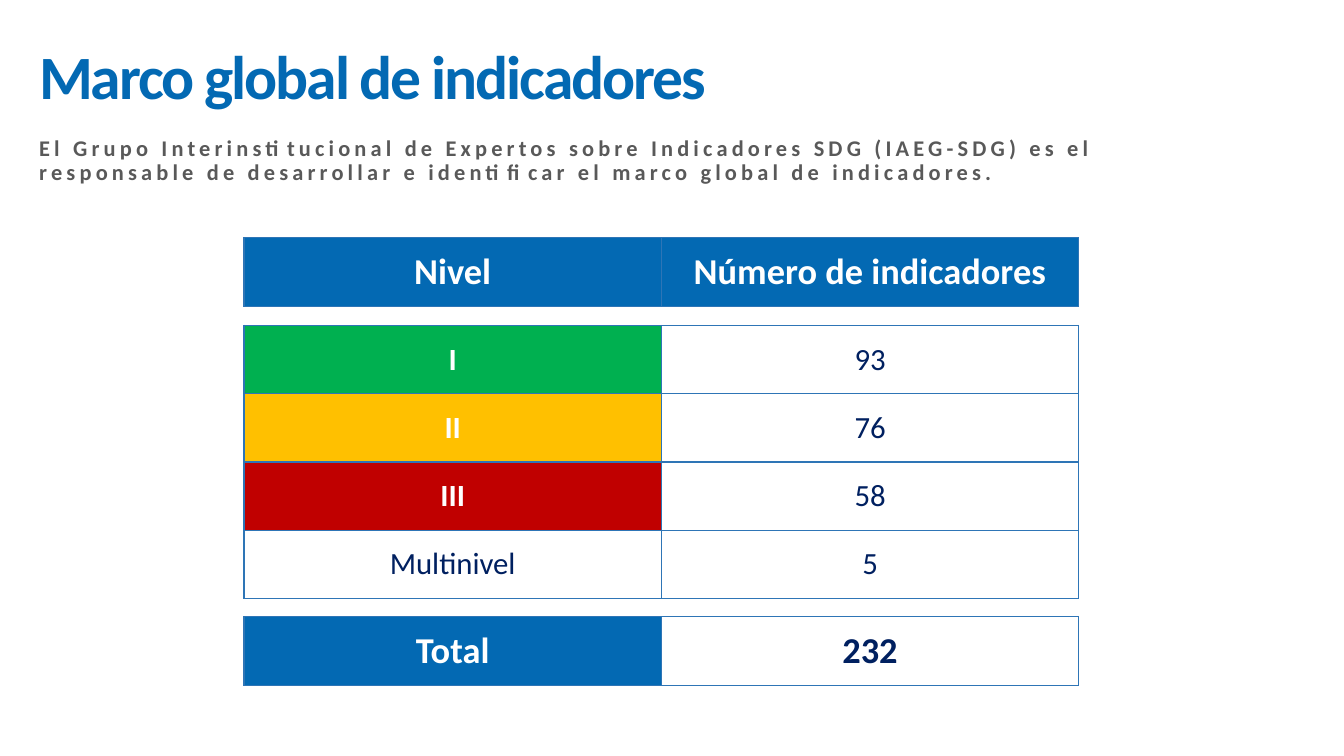
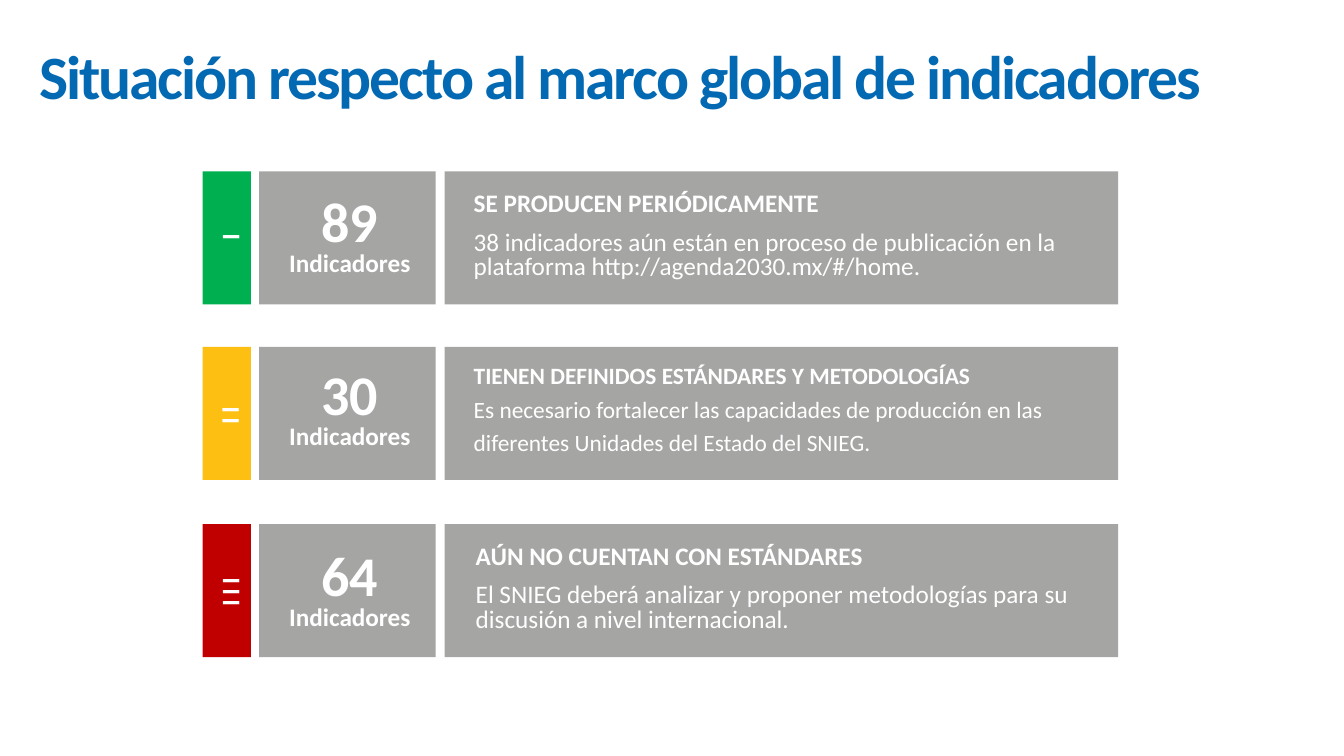
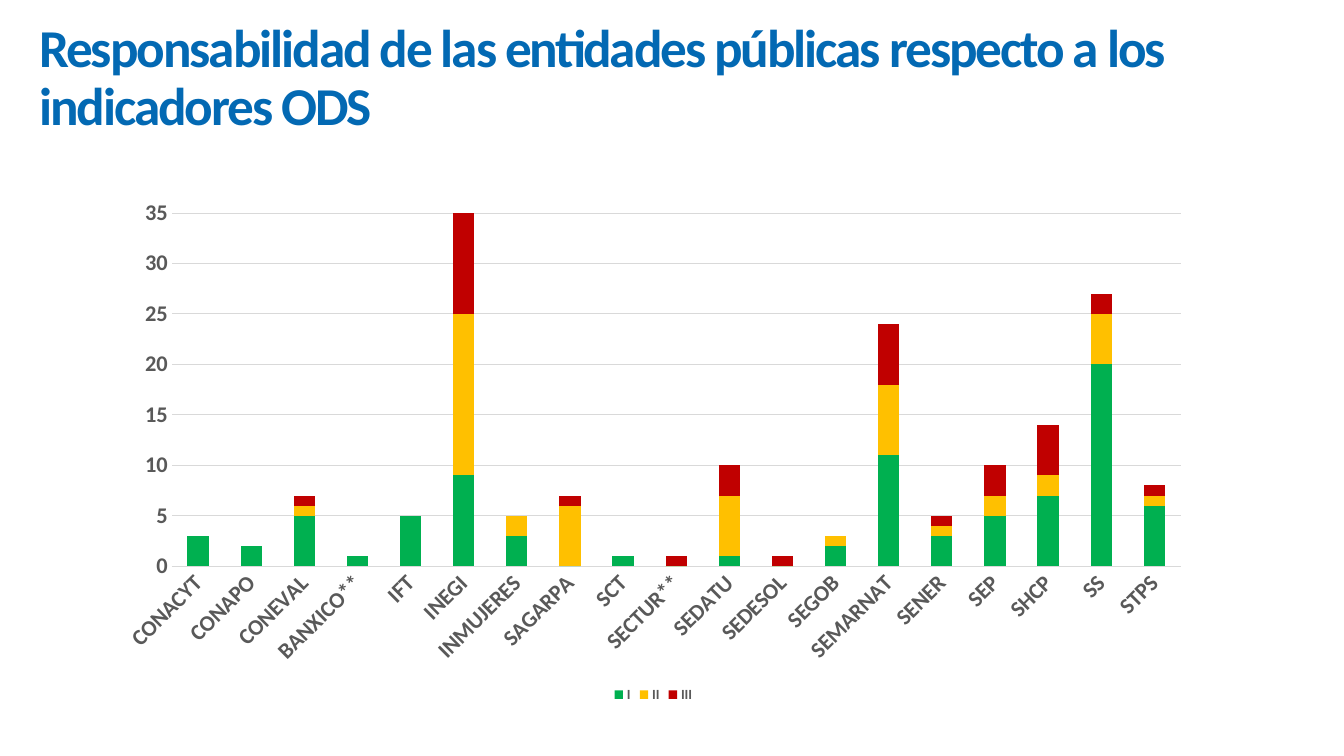
from pptx import Presentation
from pptx.chart.data import CategoryChartData
from pptx.dml.color import RGBColor
from pptx.enum.chart import XL_CHART_TYPE, XL_LEGEND_POSITION, XL_TICK_MARK
from pptx.enum.shapes import MSO_SHAPE
from pptx.enum.text import MSO_ANCHOR, PP_ALIGN
from pptx.oxml import parse_xml
from pptx.oxml.ns import nsdecls, qn
from pptx.util import Pt

LEFT, CENTER = PP_ALIGN.LEFT, PP_ALIGN.CENTER
TOP, MIDDLE = MSO_ANCHOR.TOP, MSO_ANCHOR.MIDDLE
RECTANGLE = MSO_SHAPE.RECTANGLE
NO_TICK = XL_TICK_MARK.NONE
STACKED = XL_CHART_TYPE.COLUMN_STACKED
LEGEND_BOTTOM = XL_LEGEND_POSITION.BOTTOM
PX = 9144  # 100 px to the inch


class Theme:
    font = "Calibri"
    blue = "0369B3"
    border = "2E75B6"
    navy = "002060"
    white = "FFFFFF"
    gray_text = "595959"
    gray_panel = "A5A5A4"
    grid = "D9D9D9"
    green = "00B050"
    yellow = "FFC000"
    amber = "FCBF12"
    red = "C00000"
    title = 44
    long_title = 38
    number = 40
    table_head = 26
    table_body = 22
    body = 18
    small_body = 16.7
    subtitle = 16
    axis = 16
    legend = 10


def add_runs(paragraph, runs, color, tracking=0):
    """Append (text, size, bold) runs; tracking is in points."""
    for text, size, bold in runs:
        run = paragraph.add_run()
        run.text = text
        run.font.name = Theme.font
        run.font.size = Pt(size)
        run.font.bold = bold
        run.font.color.rgb = RGBColor.from_string(color)
        if tracking:
            run._r.get_or_add_rPr().set("spc", str(int(tracking * 100)))


def add_text(slide, box, paragraphs, color, tracking=0, leading=None,
             align=LEFT, anchor=TOP, wrap=True):
    """Add a text box holding one list of runs per paragraph."""
    text_box = slide.shapes.add_textbox(*(v * PX for v in box))
    frame = text_box.text_frame
    frame.word_wrap = wrap
    frame.vertical_anchor = anchor
    for i, runs in enumerate(paragraphs):
        paragraph = frame.add_paragraph() if i else frame.paragraphs[0]
        paragraph.alignment = align
        if leading:
            paragraph.line_spacing = leading
        if i:
            paragraph.space_before = Pt(10)
        add_runs(paragraph, runs, color, tracking)
    return text_box


prs = Presentation()
prs.slide_width, prs.slide_height = 1333 * PX, 750 * PX

slides = []
for title, size in [
    ("Marco global de indicadores", Theme.title),
    ("Situación respecto al marco global de indicadores", Theme.title),
    ("Responsabilidad de las entidades públicas respecto a los indicadores ODS",
     Theme.long_title),
]:
    slide = prs.slides.add_slide(prs.slide_layouts[6])
    add_text(slide, (29, 27, 1204, 103), [[(title, size, True)]], Theme.blue,
             tracking=-1.5, leading=0.9, anchor=MIDDLE)
    slides.append(slide)
framework, status, responsibility = slides

# Global framework: levels and totals
add_text(framework, (29, 131, 1108, 62), [[(
    "El Grupo Interinstitucional de Expertos sobre Indicadores SDG (IAEG-SDG) es el "
    "responsable de desarrollar e identificar el marco global de indicadores.",
    Theme.subtitle, True)]], Theme.gray_text, tracking=3, leading=0.9)

# Each table: top, height, size, rows; each cell: text, bold, text colour, fill
level_tables = [
    (323, 271, Theme.table_body, [
        [("I", True, Theme.white, Theme.green), ("93", False, Theme.navy, Theme.white)],
        [("II", True, Theme.white, Theme.yellow), ("76", False, Theme.navy, Theme.white)],
        [("III", True, Theme.white, Theme.red), ("58", False, Theme.navy, Theme.white)],
        [("Multinivel", False, Theme.navy, Theme.white),
         ("5", False, Theme.navy, Theme.white)],
    ]),
    (236, 68, Theme.table_head, [
        [("Nivel", True, Theme.white, Theme.blue),
         ("Número de indicadores", True, Theme.white, Theme.blue)],
    ]),
    (612, 68, Theme.table_head, [
        [("Total", True, Theme.white, Theme.blue), ("232", True, Theme.navy, Theme.white)],
    ]),
]
for top, height, size, rows in level_tables:
    table = framework.shapes.add_table(
        len(rows), 2, 242 * PX, top * PX, 828 * PX, height * PX).table
    table.first_row = table.horz_banding = False
    for r, row in enumerate(rows):
        for c, (text, bold, color, fill) in enumerate(row):
            cell = table.cell(r, c)
            cell.margin_left = cell.margin_right = 4 * PX
            cell.margin_top = cell.margin_bottom = 2 * PX
            cell.vertical_anchor = MIDDLE
            for side in ("lnL", "lnR", "lnT", "lnB"):
                cell._tc.get_or_add_tcPr().append(parse_xml(
                    f'<a:{side} {nsdecls("a")} w="12700"><a:solidFill>'
                    f'<a:srgbClr val="{Theme.border}"/></a:solidFill></a:{side}>'))
            cell.fill.solid()
            cell.fill.fore_color.rgb = RGBColor.from_string(fill)
            paragraph = cell.text_frame.paragraphs[0]
            paragraph.alignment = CENTER
            add_runs(paragraph, [(text, size, bold)], color)

# Status of each level: numeral, count and description
# Each level: numeral, colour, count, tops of panel, count and numeral,
# left of description, size, leading, heading, lines
levels = [
    ("I", Theme.green, "89", 170, 193, 213, 460, Theme.body, 0.8,
     "SE PRODUCEN PERIÓDICAMENTE",
     ["38 indicadores aún están en proceso de publicación en la plataforma "
      "http://agenda2030.mx/#/home."]),
    ("II", Theme.amber, "30", 344, 365, 390, 460, Theme.small_body, 0.7,
     "TIENEN DEFINIDOS ESTÁNDARES Y METODOLOGÍAS",
     ["Es necesario fortalecer las capacidades de producción en las",
      "diferentes Unidades del Estado del SNIEG."]),
    ("III", Theme.red, "64", 520, 544, 565, 462, Theme.body, 0.8,
     "AÚN NO CUENTAN CON ESTÁNDARES",
     ["El SNIEG deberá analizar y proponer metodologías para su discusión "
      "a nivel internacional."]),
]
for (numeral, color, count, top, count_top, numeral_top, text_left, size, leading,
     heading, lines) in levels:
    for left, width, fill in [(257, 175, Theme.gray_panel),
                              (441, 668, Theme.gray_panel),
                              (201, 48, color)]:
        panel = status.shapes.add_shape(
            RECTANGLE, left * PX, top * PX, width * PX, 132 * PX)
        panel.shadow.inherit = False
        panel.fill.solid()
        panel.fill.fore_color.rgb = RGBColor.from_string(fill)
        panel.line.fill.background()
    add_text(status, (273, count_top, 148, 90),
             [[(count, Theme.number, True), (" ", Theme.subtitle, True),
               ("Indicadores", Theme.body, True)]],
             Theme.white, leading=0.8, align=CENTER)
    add_text(status, (text_left, top + 17, 625, 103),
             [[(heading, size, True)]] + [[(line, size, False)] for line in lines],
             Theme.white, leading=leading)
    numeral_width = 20 + 11 * len(numeral)
    numeral_label = add_text(
        status, (227 - numeral_width // 2, numeral_top, numeral_width, 40),
        [[(numeral, Theme.body, True)]], Theme.white, tracking=3, wrap=False)
    numeral_label.rotation = 270

# Indicators by institution and level
institutions = [
    ("CONACYT", 3, 0, 0), ("CONAPO", 2, 0, 0), ("CONEVAL", 5, 1, 1),
    ("BANXICO**", 1, 0, 0), ("IFT", 5, 0, 0), ("INEGI", 9, 16, 10),
    ("INMUJERES", 3, 2, 0), ("SAGARPA", 0, 6, 1), ("SCT", 1, 0, 0),
    ("SECTUR**", 0, 0, 1), ("SEDATU", 1, 6, 3), ("SEDESOL", 0, 0, 1),
    ("SEGOB", 2, 1, 0), ("SEMARNAT", 11, 7, 6), ("SENER", 3, 1, 1),
    ("SEP", 5, 2, 3), ("SHCP", 7, 2, 5), ("SS", 20, 5, 2), ("STPS", 6, 1, 1),
]
names, *level_values = zip(*institutions)
chart_data = CategoryChartData()
chart_data.categories = names
for level, values in zip(("I", "II", "III"), level_values):
    chart_data.add_series(level, values)
chart = responsibility.shapes.add_chart(
    STACKED, 103 * PX, 181 * PX, 1090 * PX, 520 * PX, chart_data).chart
chart.has_title = False
chart.has_legend = True
chart.legend.position = LEGEND_BOTTOM
chart.legend.include_in_layout = False

plot = chart.plots[0]
plot.vary_by_categories = False
plot.gap_width, plot.overlap = 150, 100
for series, color in zip(plot.series, (Theme.green, Theme.yellow, Theme.red)):
    series.format.fill.solid()
    series.format.fill.fore_color.rgb = RGBColor.from_string(color)

category_axis, value_axis = chart.category_axis, chart.value_axis
value_axis.minimum_scale, value_axis.maximum_scale = 0, 37
value_axis.major_unit = 5
value_axis.has_major_gridlines = True
value_axis.format.line.fill.background()
for axis in (category_axis, value_axis):
    axis.major_tick_mark = axis.minor_tick_mark = NO_TICK
for line in (category_axis.format.line, value_axis.major_gridlines.format.line):
    line.color.rgb = RGBColor.from_string(Theme.grid)
    line.width = Pt(0.75)
for font, size in [(chart.font, Theme.legend), (chart.legend.font, Theme.legend),
                   (category_axis.tick_labels.font, Theme.axis),
                   (value_axis.tick_labels.font, Theme.axis)]:
    font.name, font.size, font.bold = Theme.font, Pt(size), True
    font.color.rgb = RGBColor.from_string(Theme.gray_text)

# Category labels slant upwards at 45 degrees
label_body = category_axis._element.find(qn("c:txPr")).find(qn("a:bodyPr"))
label_body.set("rot", "-2700000")
label_body.set("vert", "horz")

prs.save("out.pptx")
